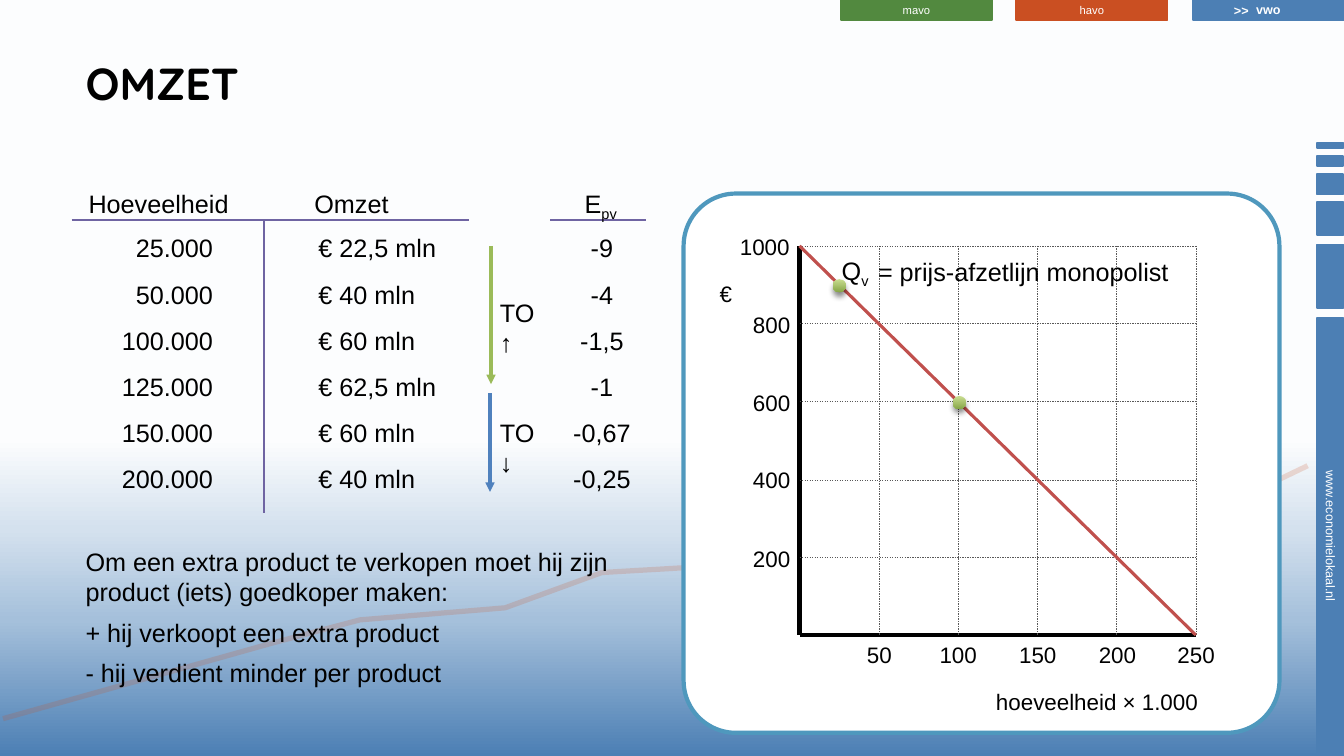
from copy import deepcopy
from pptx import Presentation
from pptx.dml.color import RGBColor
from pptx.enum.dml import MSO_LINE
from pptx.enum.shapes import MSO_CONNECTOR, MSO_SHAPE
from pptx.enum.text import MSO_ANCHOR, PP_ALIGN
from pptx.oxml.ns import qn
from pptx.oxml.xmlchemy import OxmlElement
from pptx.util import Emu, Pt

PX = 9144  # 100 px to the inch
RECT, ROUNDED, OVAL = MSO_SHAPE.RECTANGLE, MSO_SHAPE.ROUNDED_RECTANGLE, MSO_SHAPE.OVAL
STRAIGHT, DASH = MSO_CONNECTOR.STRAIGHT, MSO_LINE.DASH
LEFT, CENTER, RIGHT = PP_ALIGN.LEFT, PP_ALIGN.CENTER, PP_ALIGN.RIGHT
MIDDLE = MSO_ANCHOR.MIDDLE
THEME = {
    "blue": "4C7FB4", "orange": "CA4F22", "green": "52893F",
    "white": "FFFFFF", "black": "000000", "panel": "4F98BD",
    "grid": "595959", "demand": "C0504D", "rule": "6F64A2",
    "up": "9BBB59", "down": "4F81BD",
    "dot": ((0, "C9DD90"), (1, "86A547")),
    "sky": ((0, "4C7FB4"), (0.18, "A5C0DB"), (0.3, "D4E1EE"),
            (0.42, "FCFDFE"), (0.5, "FFFFFF")),
    "font": "Arial", "title_font": "Quicksand",
    "title": 32, "text": 18, "axis": 16, "tab": 9, "small_tab": 8,
}


def color(name):
    return RGBColor.from_string(THEME.get(name, name))


def write(tf, text, size, ink="black", bold=False, align=LEFT, font="font"):
    """Fill a text frame; an underscore starts a subscript."""
    fmt = {"name": THEME[font], "size": Pt(THEME[size]), "bold": bold}
    for i, content in enumerate(text.split("\n")):
        p = tf.add_paragraph() if i else tf.paragraphs[0]
        p.alignment = align
        if i:
            p.space_before = Pt(4)
        if "\n" in text:
            p.space_after = Pt(3.4)
        for j, part in enumerate(content.split("_")):
            r = p.add_run()
            r.text = part
            for key, value in fmt.items():
                setattr(r.font, key, value)
            r.font.color.rgb = color(ink)
            if j:
                r._r.get_or_add_rPr().set("baseline", "-25000")


prs = Presentation()
prs.slide_width, prs.slide_height = Emu(1333 * PX), Emu(750 * PX)
s = prs.slides.add_slide(prs.slide_layouts[6])

# Background gradient
fill = s.background.fill
fill.gradient()
fill.gradient_angle = 90
stop_list = s._element.find(".//" + qn("a:gsLst"))
while len(stop_list) < len(THEME["sky"]):
    stop_list.append(deepcopy(stop_list[0]))
for stop, (position, tint) in zip(fill.gradient_stops, THEME["sky"]):
    stop.position, stop.color.rgb = position, color(tint)

# Side blocks and level tabs: x, y, w, h, rotation, colour, text, size, bold
bars = [(1183, 0, 150, 20, 0, "blue", "vwo", "tab", True),
        (1008, 0, 150, 20, 0, "orange", "havo", "small_tab", False),
        (834, 0, 150, 20, 0, "green", "mavo", "small_tab", False)]
for length, middle, text in [(433, 532, "www.economielokaal.nl"), (63, 274, ""),
                             (33, 217, ""), (20, 183, ""), (10, 160, ""), (5, 144, "")]:
    bars.append((1319 - length // 2, middle - 13, length, 26, 90, "blue", text, "tab", False))
for x, y, w, h, rotation, tint, text, size, bold in bars:
    bar = s.shapes.add_shape(RECT, x * PX, y * PX, w * PX, h * PX)
    bar.rotation = rotation
    bar.shadow.inherit = False
    bar.fill.solid()
    bar.fill.fore_color.rgb = bar.line.color.rgb = color(tint)
    bar.line.width = Pt(1.25)
    if text:
        tf = bar.text_frame
        tf.vertical_anchor, tf.margin_top, tf.margin_bottom = MIDDLE, 0, PX
        write(tf, text, size, "white", bold, CENTER)

# Faint trend line
trend_points = [(1297, 462), (1112, 551), (1071, 537), (928, 549), (849, 566), (785, 557),
                (597, 568), (501, 603), (357, 615), (270, 638), (3, 713)]
builder = s.shapes.build_freeform(*trend_points[0], scale=PX)
builder.add_line_segments(trend_points[1:], close=False)
trend = builder.convert_to_shape()
trend.shadow.inherit = False
trend.fill.background()
trend.line.color.rgb = color("orange")
trend.line.width = Pt(3.75)
alpha = OxmlElement("a:alpha")
alpha.set("val", "19000")
trend._element.spPr.find(qn("a:ln")).find(".//" + qn("a:srgbClr")).append(alpha)

# Chart panel
panel = s.shapes.add_shape(ROUNDED, 678 * PX, 192 * PX, 591 * PX, 535 * PX)
panel.adjustments[0] = 0.097
panel.shadow.inherit = False
panel.fill.solid()
panel.fill.fore_color.rgb = color("white")
panel.line.color.rgb = color("panel")
panel.line.width = Pt(3)

# Lines: x1, y1, x2, y2, colour, width, dashed, arrow
X0, Y0, X1, Y1 = 793, 244, 1186, 630
lines = [(X0, Y0, X0, Y1, "black", 3, False, False),
         (X1, Y1, X0, Y1, "black", 3, False, False)]
for i in range(5):
    y = Y0 + round(77.25 * i)
    lines.append((X0, y, X1, y, "grid", 0.25, True, False))
for i in range(1, 6):
    x = X0 + round(78.6 * i)
    lines.append((x, Y0, x, Y1, "grid", 0.25, True, False))
lines += [(X0, Y0, X1, Y1, "demand", 2.25, False, False),
          (71, 218, 465, 218, "rule", 1.25, False, False),
          (262, 218, 262, 509, "rule", 1.25, False, False),
          (546, 218, 641, 218, "rule", 1.25, False, False),
          (487, 244, 487, 381, "up", 2.25, False, True),
          (486, 390, 486, 488, "down", 2.25, False, True)]
for x1, y1, x2, y2, tint, width, dashed, arrow in lines:
    c = s.shapes.add_connector(STRAIGHT, x1 * PX, y1 * PX, x2 * PX, y2 * PX)
    c.line.color.rgb = color(tint)
    c.line.width = Pt(width)
    if dashed:
        c.line.dash_style = DASH
    if arrow:
        tail = OxmlElement("a:tailEnd")
        tail.set("type", "triangle")
        c._element.spPr.find(qn("a:ln")).append(tail)
    c._element.spPr.append(OxmlElement("a:effectLst"))

# Points on the demand line
for x, y in [(826, 277), (945, 393)]:
    dot = s.shapes.add_shape(OVAL, x * PX, y * PX, 13 * PX, 13 * PX)
    dot.line.fill.background()
    dot.fill.gradient()
    dot.fill.gradient_angle = 270
    for stop, (position, tint) in zip(dot.fill.gradient_stops, THEME["dot"]):
        stop.position, stop.color.rgb = position, color(tint)
    dot.shadow.inherit = False
    shadow = OxmlElement("a:outerShdw")
    for key, value in {"blurRad": Pt(4), "dist": Pt(3), "dir": 5400000, "rotWithShape": 0}.items():
        shadow.set(key, str(value))
    ink, alpha = OxmlElement("a:srgbClr"), OxmlElement("a:alpha")
    ink.set("val", THEME["black"])
    alpha.set("val", "46000")
    ink.append(alpha)
    shadow.append(ink)
    dot._element.spPr.find(qn("a:effectLst")).append(shadow)

# Text boxes: x, y, w, h, text, wrap, format
body = {"size": "text"}
axis = {"size": "axis"}
labels = [
    (1214, -2, 35, 25, ">>", False, {"size": "tab", "ink": "white", "bold": True}),
    (75, 50, 1002, 89, "OMZET", True, {"size": "title", "bold": True, "font": "title_font"}),
    (75, 537, 540, 155, "Om een extra product te verkopen moet hij zijn product (iets) goedkoper "
     "maken:\n+ hij verkoopt een extra product\n- hij verdient minder per product", True, body),
    (825, 248, 51, 40, "Q_v", False, body),
    (861, 249, 328, 40, "= prijs-afzetlijn monopolist", False, body),
    (978, 678, 239, 37, "hoeveelheid × 1.000", False, axis),
    (704, 273, 33, 37, "€", False, axis),
    (78, 182, 177, 40, "Hoeveelheid", False, body),
    (302, 182, 102, 40, "Omzet", False, body),
    (570, 182, 55, 40, "E_pv", False, body),
    (486, 290, 65, 40, "TO↑", True, body),
    (486, 409, 65, 40, "TO↓", True, body),
]
for i in range(5):
    price, quantity = str(1000 - 200 * i), str(50 * (i + 1))
    w = 20 + 25 * len(price) // 2
    labels.append((794 - w, 226 + round(77.5 * i), w, 37, price, False, axis))
    w = 20 + 25 * len(quantity) // 2
    labels.append((872 + round(78.5 * i) - w // 2, 631, w, 37, quantity, False, axis))
rows = [("25.000", "€ 22,5 mln", "-9"), ("50.000", "€ 40 mln", "-4"),
        ("100.000", "€ 60 mln", "-1,5"), ("125.000", "€ 62,5 mln", "-1"),
        ("150.000", "€ 60 mln", "-0,67"), ("200.000", "€ 40 mln", "-0,25")]
for i, (quantity, revenue, elasticity) in enumerate(rows):
    y = 226 + round(45.8 * i)
    w = 13 + 14 * len(quantity)
    labels.append((221 - w, y, w, 40, quantity, False, {**body, "align": RIGHT}))
    labels.append((306, y, 39 + 11 * len(revenue), 40, revenue, False, body))
    w = 20 + 12 * len(elasticity)
    labels.append((597 - w // 2, y, w, 40, elasticity, False, {**body, "align": CENTER}))
for x, y, w, h, text, wrap, fmt in labels:
    tf = s.shapes.add_textbox(x * PX, y * PX, w * PX, h * PX).text_frame
    tf.word_wrap = wrap
    write(tf, text, **fmt)

prs.save("out.pptx")
